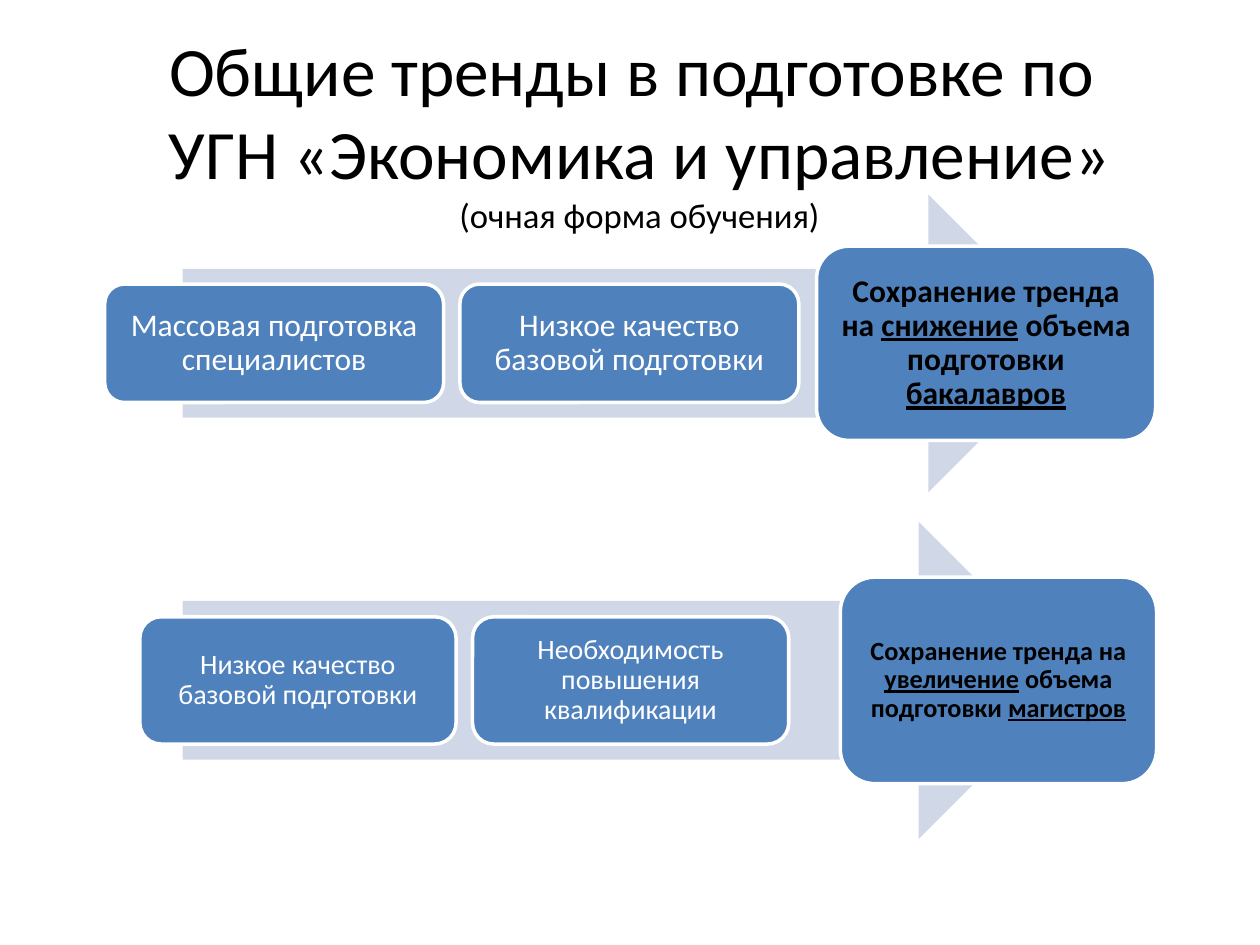
from pptx import Presentation
from pptx.dml.color import RGBColor
from pptx.enum.shapes import MSO_SHAPE
from pptx.enum.text import MSO_ANCHOR, PP_ALIGN
from pptx.util import Pt

ARROW = MSO_SHAPE.RIGHT_ARROW
ROUNDED = MSO_SHAPE.ROUNDED_RECTANGLE
MIDDLE = MSO_ANCHOR.MIDDLE
CENTER = PP_ALIGN.CENTER
COLORS = {"arrow": "D0D8E8", "step": "4F81BD", "light": "FFFFFF", "dark": "000000"}
FONT = "Calibri"

TRENDS = [
    {
        "middle": 196.2, "arrow_height": 170, "width": 193.7,
        "step_height": 67.7, "result_height": 111, "lefts": (59.8, 262.8, 466.6),
        "steps": ("Массовая подготовка специалистов", "Низкое качество базовой подготовки"),
        "step_size": 18, "result_size": 18,
        "change": "снижение", "degree": "бакалавров",
    },
    {
        "middle": 388.8, "arrow_height": 181.4, "width": 180.7,
        "step_height": 72.7, "result_height": 118, "lefts": (79.9, 270, 480.2),
        "steps": ("Низкое качество базовой подготовки", "Необходимость повышения квалификации"),
        "step_size": 16, "result_size": 15,
        "change": "увеличение", "degree": "магистров",
    },
]


def color(name):
    """Return the named colour."""
    return RGBColor.from_string(COLORS[name])


def add_text(paragraph, text, size, ink="dark", bold=False, underline=False):
    """Append one formatted run to a paragraph."""
    run = paragraph.add_run()
    run.text = text
    font = run.font
    font.name, font.size = FONT, Pt(size)
    font.bold, font.underline = bold, underline
    font.color.rgb = color(ink)


def prepare_frame(shape, inset):
    """Centre the text of a shape and return its first paragraph."""
    frame = shape.text_frame
    frame.word_wrap = True
    frame.vertical_anchor = MIDDLE
    frame.margin_left = frame.margin_right = Pt(inset)
    frame.margin_top = frame.margin_bottom = Pt(inset)
    paragraph = frame.paragraphs[0]
    paragraph.alignment = CENTER
    return paragraph


def add_block(slide, preset, left, middle, width, height, fill):
    """Draw a plain preset shape centred on a horizontal axis."""
    block = slide.shapes.add_shape(
        preset, Pt(left), Pt(middle - height / 2), Pt(width), Pt(height))
    block.shadow.inherit = False
    block.fill.solid()
    block.fill.fore_color.rgb = color(fill)
    block.line.fill.background()
    return block


def add_step(slide, left, middle, width, height):
    """Draw an outlined rounded box and return its paragraph."""
    step = add_block(slide, ROUNDED, left, middle, width, height, "step")
    step.line.color.rgb = color("light")
    step.line.width = Pt(2)
    paragraph = prepare_frame(step, 5)
    paragraph.line_spacing = 0.9
    return paragraph


def add_title(slide):
    """Add the two-line title with its small subtitle."""
    title = slide.shapes.add_textbox(Pt(25.2), Pt(21.6), Pt(680.4), Pt(106.6))
    paragraph = prepare_frame(title, 3.6)
    for line in ("Общие тренды в подготовке по ", "УГН «Экономика и управление»"):
        add_text(paragraph, line, 39.6)
        paragraph.add_line_break()
    add_text(paragraph, "(очная форма обучения)", 19.8)


def add_trend(slide, trend):
    """Draw an arrow with two causes and the resulting trend."""
    middle, width = trend["middle"], trend["width"]
    add_block(slide, ARROW, 104.4, middle, 511.2, trend["arrow_height"], "arrow")
    *step_lefts, result_left = trend["lefts"]
    for left, label in zip(step_lefts, trend["steps"]):
        step = add_step(slide, left, middle, width, trend["step_height"])
        add_text(step, label, trend["step_size"], ink="light")
    result = add_step(slide, result_left, middle, width, trend["result_height"])
    for label, underline in (
        ("Сохранение тренда на ", False), (trend["change"], True),
        (" объема подготовки ", False), (trend["degree"], True),
    ):
        add_text(result, label, trend["result_size"], bold=True, underline=underline)


def main():
    """Build and save the slide."""
    deck = Presentation()
    deck.slide_width, deck.slide_height = Pt(720), Pt(540)
    slide = deck.slides.add_slide(deck.slide_layouts[6])
    add_title(slide)
    for trend in TRENDS:
        add_trend(slide, trend)
    deck.save("out.pptx")


if __name__ == "__main__":
    main()
